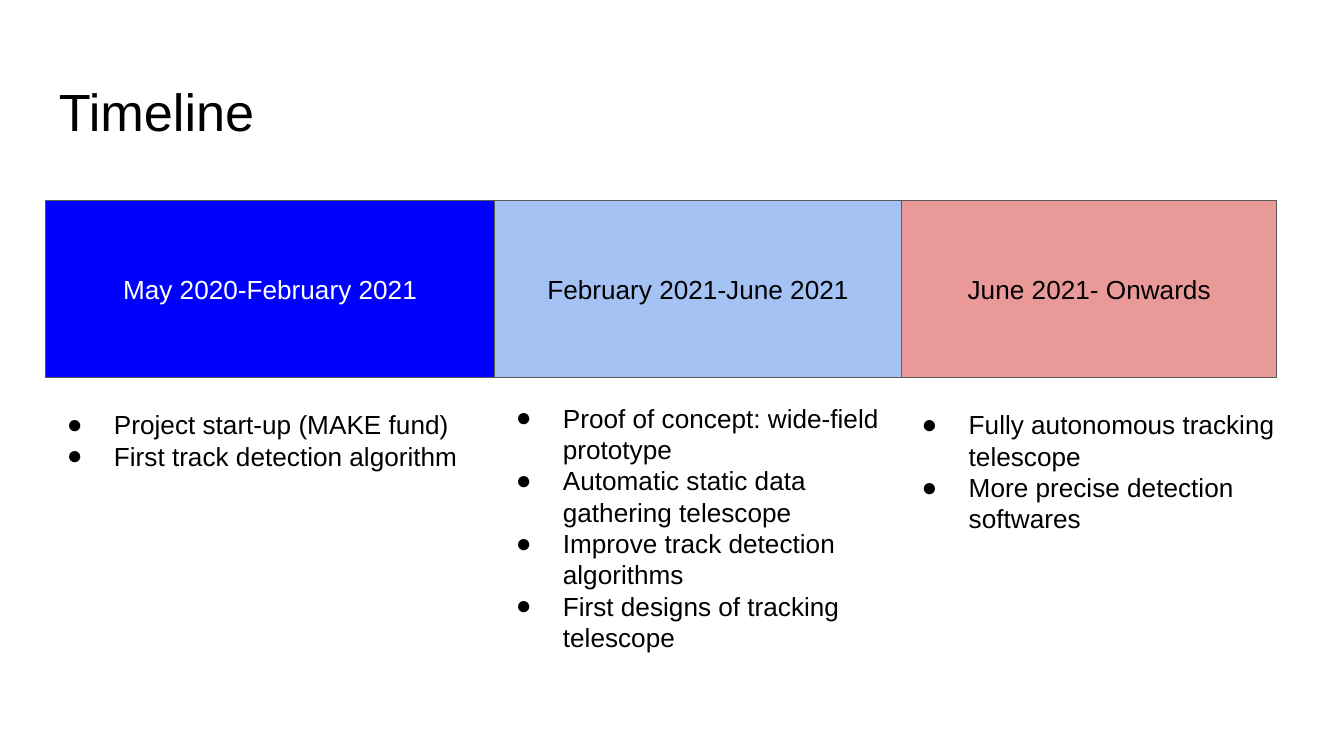
"""Build the project timeline slide."""
from lxml.etree import SubElement
from pptx import Presentation
from pptx.dml.color import RGBColor
from pptx.enum.shapes import MSO_SHAPE
from pptx.enum.text import MSO_ANCHOR, PP_ALIGN
from pptx.oxml.ns import qn
from pptx.util import Inches, Pt

THEME = {
    "font": "Arial", "title": 28, "body": 14,
    "ink": "000000", "light": "FFFFFF", "edge": "595959",
}
TITLE = "Timeline"
PHASES = [
    {"label": "May 2020-February 2021", "width": 3.34, "fill": "0000FF",
     "ink": "light", "notes": (0.25, 2.94, 3.34, 1.13),
     "items": ["Project start-up (MAKE fund)",
               "First track detection algorithm"]},
    {"label": "February 2021-June 2021", "width": 3.03, "fill": "A4C2F4",
     "ink": "ink", "notes": (3.59, 2.89, 3.2, 2.29),
     "items": ["Proof of concept: wide-field prototype",
               "Automatic static data gathering telescope",
               "Improve track detection algorithms",
               "First designs of tracking telescope"]},
    {"label": "June 2021- Onwards", "width": 2.79, "fill": "EA9999",
     "ink": "ink", "notes": (6.61, 2.94, 3.2, 2.19),
     "items": ["Fully autonomous tracking telescope",
               "More precise detection softwares"]},
]
WIDE = 10
LEFT, TOP, HIGH = 0.34, 1.49, 1.32


def color(code):
    """Turn a hex code into a color."""
    return RGBColor.from_string(code)


def bullet(para):
    """Give a paragraph a round bullet and a hanging indent."""
    props = para._p.get_or_add_pPr()
    props.set("marL", str(Inches(0.5)))
    props.set("indent", str(Inches(-0.35)))
    tint = SubElement(props, qn("a:buClr"))
    SubElement(tint, qn("a:srgbClr"), val=THEME["ink"])
    SubElement(props, qn("a:buFont"), typeface=THEME["font"])
    SubElement(props, qn("a:buChar"), char="●")


def write(shape, lines, size="body", ink="ink", align=PP_ALIGN.LEFT,
          anchor=MSO_ANCHOR.TOP, dots=False):
    """Fill a shape with one paragraph per line."""
    frame = shape.text_frame
    frame.word_wrap = True
    frame.vertical_anchor = anchor
    frame.margin_left = frame.margin_right = Inches(0.1)
    frame.margin_top = frame.margin_bottom = Inches(0.1)
    for i, line in enumerate(lines):
        para = frame.add_paragraph() if i else frame.paragraphs[0]
        para.alignment = align
        if dots:
            bullet(para)
        run = para.add_run()
        run.text = line
        run.font.name = THEME["font"]
        run.font.size = Pt(THEME[size])
        run.font.color.rgb = color(THEME[ink])


def block(slide, phase, left):
    """Draw the colored bar of one phase."""
    bar = slide.shapes.add_shape(
        MSO_SHAPE.RECTANGLE, Inches(left), Inches(TOP),
        Inches(phase["width"]), Inches(HIGH))
    bar.shadow.inherit = False
    bar.fill.solid()
    bar.fill.fore_color.rgb = color(phase["fill"])
    bar.line.color.rgb = color(THEME["edge"])
    bar.line.width = Pt(0.75)
    write(bar, [phase["label"]], ink=phase["ink"],
          align=PP_ALIGN.CENTER, anchor=MSO_ANCHOR.MIDDLE)


def text(slide, place, lines, **style):
    """Add a text box at a place given in inches."""
    box = slide.shapes.add_textbox(*map(Inches, place))
    write(box, lines, **style)


def main():
    """Build and save the deck."""
    deck = Presentation()
    deck.slide_width = Inches(WIDE)
    deck.slide_height = Inches(WIDE * 9 / 16)
    slide = deck.slides.add_slide(deck.slide_layouts[6])
    text(slide, (LEFT, 0.49, 9.32, 0.63), [TITLE], size="title")
    left = LEFT
    for phase in PHASES:
        block(slide, phase, left)
        text(slide, phase["notes"], phase["items"], dots=True)
        left += phase["width"]
    deck.save("out.pptx")


if __name__ == "__main__":
    main()
